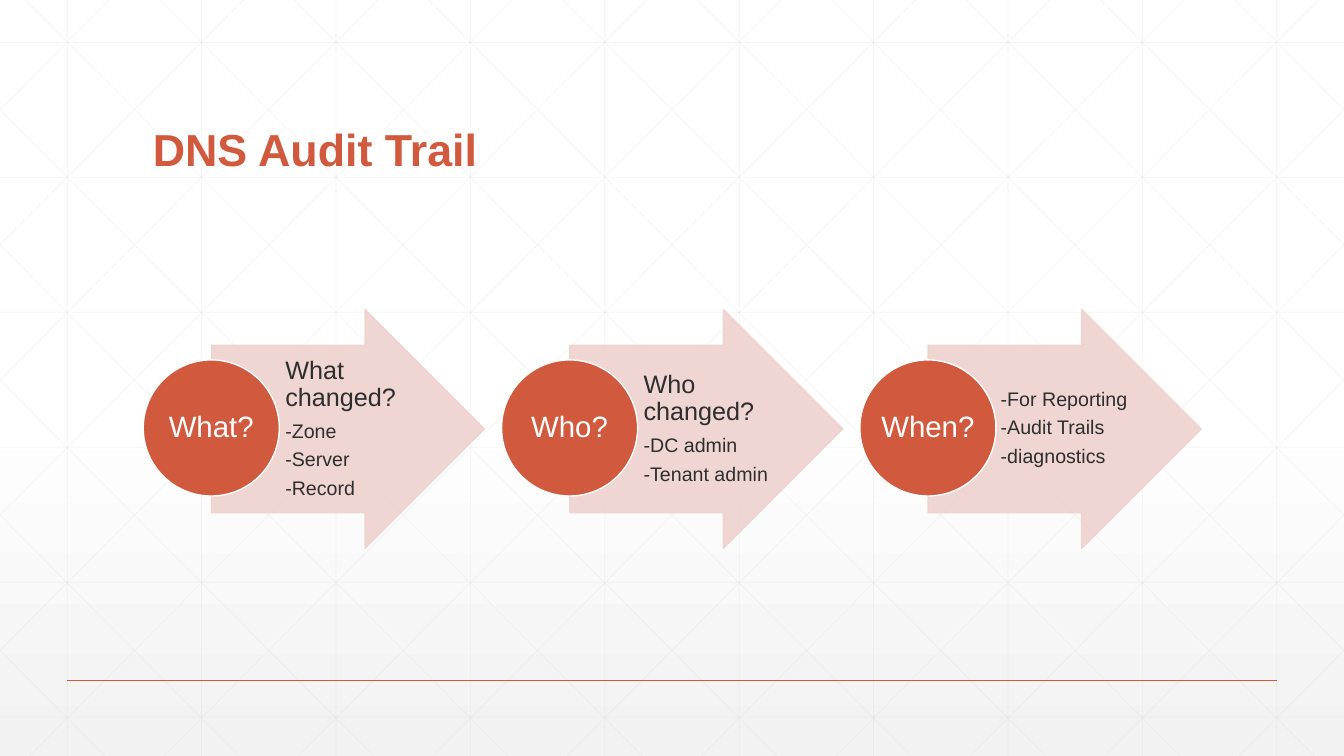
"""Builds the DNS Audit Trail slide."""
from dataclasses import dataclass

from lxml import etree
from pptx import Presentation
from pptx import util as u
from pptx.dml.color import RGBColor
from pptx.enum import shapes, text
from pptx.oxml import ns


@dataclass(frozen=True)
class Theme:
    """Colours, font and type sizes of the slide."""
    accent: str = "D15A3E"
    arrow: str = "EED2CE"
    ink: str = "2D2E2D"
    white: str = "FFFFFF"
    shade: str = "F2F2F2"
    grid: str = "D9D9D9"
    font: str = "Arial"
    title: int = 32
    label: int = 21
    head: int = 18
    item: int = 14


T = Theme()
W, H = 33.87, 19.05
LEFT, JUSTIFY, CENTER = text.PP_ALIGN.LEFT, text.PP_ALIGN.JUSTIFY, text.PP_ALIGN.CENTER
STEPS = [
    ("What?", [("What changed?", T.head), ("-Zone", T.item), ("-Server", T.item),
               ("-Record", T.item)], JUSTIFY, 0.13),
    ("Who?", [("Who changed?", T.head), ("-DC admin", T.item),
              ("-Tenant admin", T.item)], LEFT, 0.13),
    ("When?", [("-For Reporting", T.item), ("-Audit Trails", T.item),
               ("-diagnostics", T.item)], LEFT, 0.1),
]


def rgb(color):
    """Turn a hex string into a colour."""
    return RGBColor.from_string(color)


def set_opacity(sp, percent):
    """Make the fill and line colours of a shape see-through."""
    for clr in sp.element.iter(ns.qn("a:srgbClr")):
        etree.SubElement(clr, ns.qn("a:alpha"), val=str(percent * 1000))


def write(sp, lines, color, align=LEFT, bold=False, anchor=text.MSO_ANCHOR.MIDDLE,
          insets=(0.03, 0.03, 0.03, 0.03), gap=0.38):
    """Write (text, size) lines as the paragraphs of a shape."""
    tf = sp.text_frame
    tf.word_wrap = True
    tf.auto_size = text.MSO_AUTO_SIZE.NONE
    tf.vertical_anchor = anchor
    tf.margin_left, tf.margin_top, tf.margin_right, tf.margin_bottom = map(u.Cm, insets)
    for i, (words, size) in enumerate(lines):
        p = tf.add_paragraph() if i else tf.paragraphs[0]
        p.alignment = align
        p.line_spacing = 0.9
        p.space_before, p.space_after = u.Pt(0), u.Pt(size * gap)
        r = p.add_run()
        r.text = words
        r.font.name, r.font.size, r.font.bold = T.font, u.Pt(size), bold
        r.font.color.rgb = rgb(color)


def add_line(parent, start, end, color, width):
    """Draw a straight line between two points."""
    line = parent.add_connector(shapes.MSO_CONNECTOR.STRAIGHT, *map(u.Cm, start + end))
    line.line.color.rgb = rgb(color)
    line.line.width = u.Pt(width)
    etree.SubElement(line.element.spPr, ns.qn("a:effectLst"))
    return line


def add_shape(s, kind, box, fill, line):
    """Add a filled and outlined preset shape."""
    sp = s.shapes.add_shape(kind, *map(u.Cm, box))
    sp.shadow.inherit = False
    sp.fill.solid()
    sp.fill.fore_color.rgb = rgb(fill)
    sp.line.color.rgb = rgb(line)
    sp.line.width = u.Pt(1)
    return sp


def add_backdrop(s, width, height):
    """Shade the background and cover it with the grid and its diagonals."""
    fill = s.background.fill
    fill.gradient()
    fill.gradient_angle = 270
    for stop, position, color in zip(fill.gradient_stops, (0.53, 1), (T.white, T.shade)):
        stop.position = position
        stop.color.rgb = rgb(color)

    pitch, row, run = width / 10, 3.4, 18.94
    slope = height / run
    ends = [((x, 0), (x, height)) for x in (pitch * (i + 0.5) for i in range(10))]
    ends += [((0, y), (width, y)) for y in (1.07 + row * i for i in range(6))]
    for i in range(-5, 10):
        top = 0.64 + pitch * i
        x1, x2 = max(top, 0), min(top + run, width)
        y1, y2 = (x1 - top) * slope, (x2 - top) * slope
        ends += [((x1, y1), (x2, y2)), ((width - x1, y1), (width - x2, y2))]

    grid = s.shapes.add_group_shape()
    for start, end in ends:
        set_opacity(add_line(grid.shapes, start, end, T.grid, 0.5), 25)
    add_line(s.shapes, (1.69, 17.15), (width - 1.69, 17.15), T.accent, 1)


def add_title(s, words, box):
    """Place the title and bring it in front of the backdrop."""
    title = s.shapes.title
    title.left, title.top, title.width, title.height = map(u.Cm, box)
    write(title, [(words, T.title)], T.accent, bold=True, gap=0,
          anchor=text.MSO_ANCHOR.BOTTOM, insets=(0.25, 0.13, 0.25, 0.13))
    title.element.getparent().append(title.element)


def add_step(s, x, y, label, lines, align, inset):
    """Draw one step: an arrow with its text and a labelled circle."""
    arrow = add_shape(s, shapes.MSO_SHAPE.RIGHT_ARROW, (x + 1.72, y, 6.88, 6.02),
                      T.arrow, T.arrow)
    arrow.adjustments[0], arrow.adjustments[1] = 0.7, 0.5
    set_opacity(arrow, 90)
    body = s.shapes.add_textbox(*map(u.Cm, (x + 3.45, y + 0.89, 3.35, 4.22)))
    write(body, lines, T.ink, align=align, insets=(inset, 0.03, inset - 0.05, 0.03))
    circle = add_shape(s, shapes.MSO_SHAPE.OVAL, (x, y + 1.27, 3.43, 3.43),
                       T.accent, T.white)
    write(circle, [(label, T.label)], T.white, align=CENTER)


def add_steps(s, x, y, pitch):
    """Set the steps side by side at an equal pitch."""
    for i, step in enumerate(STEPS):
        add_step(s, x + pitch * i, y, *step)


def main():
    """Build and save the slide."""
    prs = Presentation()
    prs.slide_width, prs.slide_height = u.Cm(W), u.Cm(H)
    s = prs.slides.add_slide(prs.slide_layouts[5])
    add_backdrop(s, W, H)
    add_title(s, "DNS Audit Trail", (3.6, 1.4, 26.67, 3.18))
    add_steps(s, 3.61, 7.8, 9.03)
    prs.save("out.pptx")


if __name__ == "__main__":
    main()
